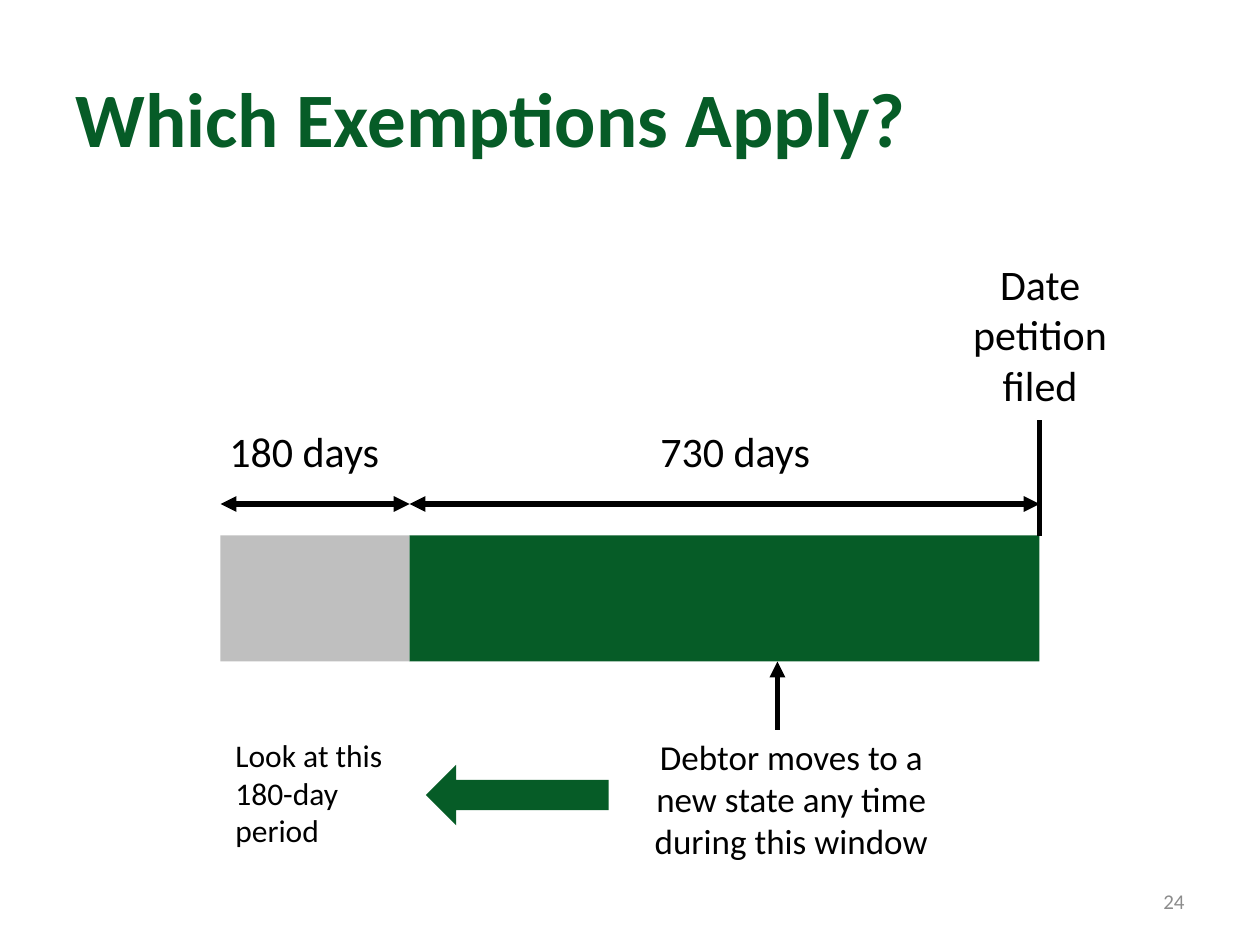
"""Build a slide with a timeline of which exemptions apply to a debtor."""
from lxml.etree import SubElement
from pptx import Presentation
from pptx.dml.color import RGBColor
from pptx.enum.shapes import MSO_CONNECTOR as Connector, MSO_SHAPE as Shape
from pptx.enum.text import MSO_ANCHOR as Anchor, PP_ALIGN as Align
from pptx.oxml.ns import qn
from pptx.util import Inches, Pt

GREEN, GRAY, BLACK, MUTED = "065C27", "BFBFBF", "000000", "8C8C8C"
START, SPLIT, FILED = 1.75, 3.25, 8.25
SPAN_TOP, BAR_TOP, BAR_HEIGHT = 4, 4.25, 1
BAR_BOTTOM = BAR_TOP + BAR_HEIGHT
LABEL_TOP, NOTE_TOP, MOVE = 3.33, 5.79, 6.17


def color(value):
    return RGBColor.from_string(value)


def write(box, area, text, size, ink, align, anchor=Anchor.TOP, bold=False):
    box.left, box.top, box.width, box.height = map(Inches, area)
    frame = box.text_frame
    frame.word_wrap = True
    frame.vertical_anchor = anchor
    para = frame.paragraphs[0]
    para.alignment = align
    span = para.add_run()
    span.text = text
    span.font.name = "Calibri"
    span.font.size = Pt(size)
    span.font.bold = bold
    span.font.color.rgb = color(ink)


deck = Presentation()
deck.slide_width, deck.slide_height = Inches(10), Inches(7.5)
page = deck.slides.add_slide(deck.slide_layouts[5])

write(page.shapes.title, (0.5, 0.3, 9, 1.25), "Which Exemptions Apply?", 44, GREEN,
      Align.LEFT, Anchor.MIDDLE, True)

for kind, area, fill in [
    (Shape.RECTANGLE, (SPLIT, BAR_TOP, FILED - SPLIT, BAR_HEIGHT), GREEN),
    (Shape.RECTANGLE, (START, BAR_TOP, SPLIT - START, BAR_HEIGHT), GRAY),
    (Shape.LEFT_ARROW, (3.38, 6.07, 1.45, 0.48), GREEN),
]:
    block = page.shapes.add_shape(kind, *map(Inches, area))
    block.shadow.inherit = False
    block.fill.solid()
    block.fill.fore_color.rgb = color(fill)
    block.line.fill.background()

for ends, arrowheads in [
    ((FILED, BAR_TOP, FILED, LABEL_TOP), []),
    ((SPLIT, SPAN_TOP, FILED, SPAN_TOP), ["headEnd", "tailEnd"]),
    ((START, SPAN_TOP, SPLIT, SPAN_TOP), ["headEnd", "tailEnd"]),
    ((MOVE, NOTE_TOP, MOVE, BAR_BOTTOM), ["tailEnd"]),
]:
    line = page.shapes.add_connector(Connector.STRAIGHT, *map(Inches, ends))
    line.line.color.rgb = color(BLACK)
    line.line.width = Pt(3)
    for arrowhead in arrowheads:
        SubElement(line.line._get_or_add_ln(), qn(f"a:{arrowhead}"), type="triangle")
    SubElement(line._element.spPr, qn("a:effectLst"))

for area, text, size, align in [
    ((7.42, 2, 1.67, 1.31), "Date petition filed", 24, Align.CENTER),
    ((4.92, LABEL_TOP, 1.83, 0.5), "730 days", 24, Align.CENTER),
    ((1.5, LABEL_TOP, 1.83, 0.5), "180 days", 24, Align.CENTER),
    ((4.92, NOTE_TOP, 2.72, 1.11),
     "Debtor moves to a new state any time during this window", 20, Align.CENTER),
    ((1.77, NOTE_TOP, 1.5, 1.01), "Look at this 180-day period", 18, Align.LEFT),
]:
    write(page.shapes.add_textbox(0, 0, 0, 0), area, text, size, BLACK, align)

write(page.shapes.add_textbox(0, 0, 0, 0), (7.17, 6.95, 2.33, 0.4), "24", 12, MUTED,
      Align.RIGHT, Anchor.MIDDLE)

deck.save("out.pptx")
